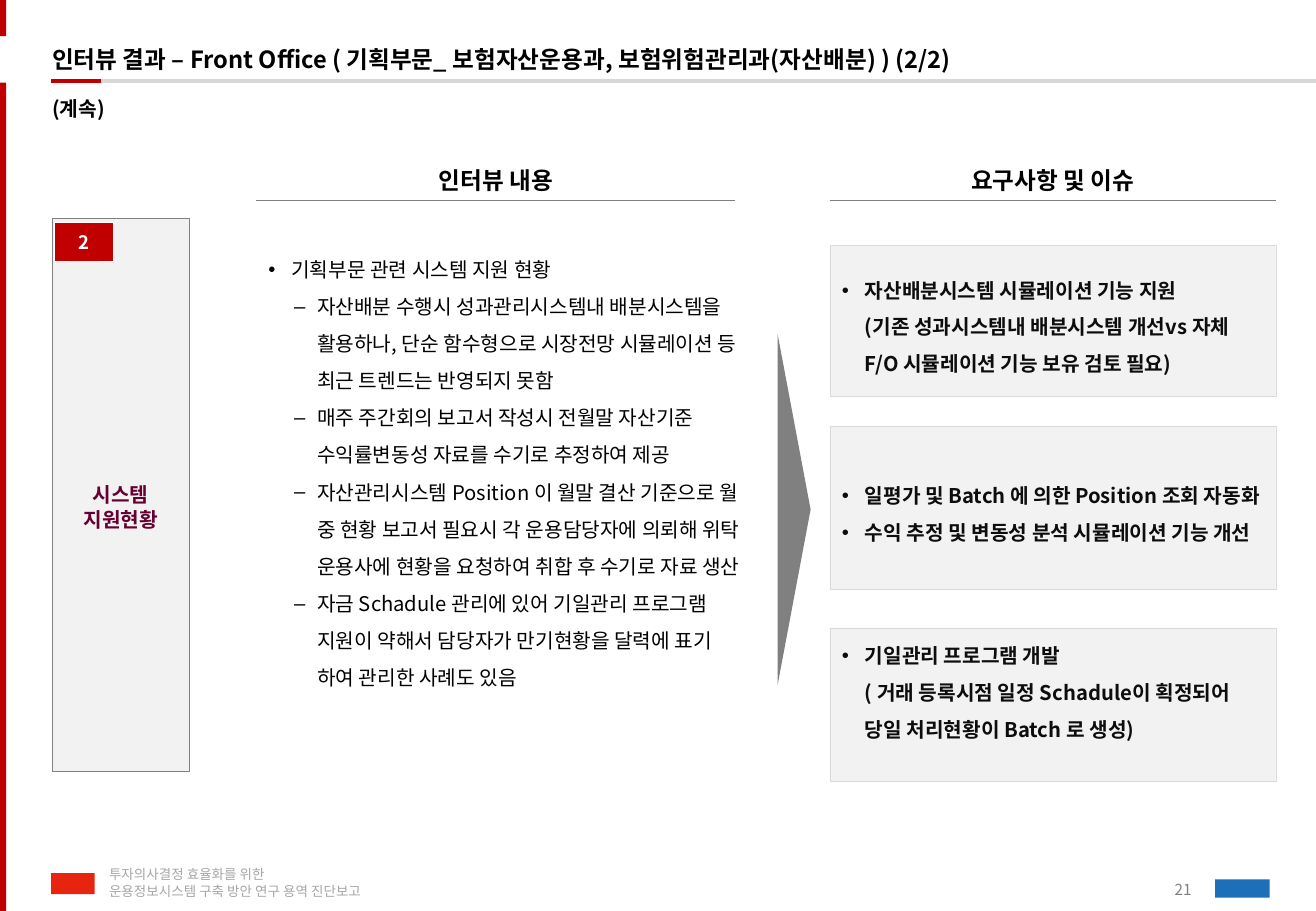
from dataclasses import dataclass
from typing import Optional

from lxml.etree import SubElement
from pptx import Presentation
from pptx.dml.color import RGBColor
from pptx.enum.shapes import MSO_CONNECTOR as Connector, MSO_SHAPE as Preset
from pptx.enum.text import MSO_ANCHOR as Anchor, MSO_AUTO_SIZE as AutoSize, PP_ALIGN as Align
from pptx.oxml.ns import qn
from pptx.util import Cm, Pt

KOREAN_FONT = "Noto Sans CJK KR"
RED, GRAY, PALE, BORDER = "C00000", "808080", "F2F2F2", "D9D9D9"
BLACK, INK, WHITE = "000000", "0D0D0D", "FFFFFF"
BULLETS = "•–"
INDENTS = (0.48, 1.02)
HANGING = 0.48


@dataclass(frozen=True)
class Area:
    left: float
    top: float
    width: float
    height: float

    def lengths(self) -> tuple:
        return Cm(self.left), Cm(self.top), Cm(self.width), Cm(self.height)


@dataclass(frozen=True)
class Style:
    size: float
    color: str = BLACK
    bold: bool = False
    align: Align = Align.LEFT
    spacing: Optional[float] = None
    latin: str = KOREAN_FONT


@dataclass(frozen=True)
class Item:
    text: str
    level: Optional[int] = None


@dataclass(frozen=True)
class Rule:
    start: float
    end: float
    y: float
    color: str
    weight: float


@dataclass(frozen=True)
class Block:
    area: Area
    fill: str
    border: Optional[str] = None
    preset: Preset = Preset.RECTANGLE
    rotation: float = 0


@dataclass(frozen=True)
class Issue:
    top: float
    height: float
    items: tuple
    bottom_inset: float = 0.13


def color(value: str) -> RGBColor:
    return RGBColor.from_string(value)


def write(shape, items: tuple, style: Style, anchor: Anchor = Anchor.MIDDLE,
          insets: tuple = (0.25, 0.13, 0.25, 0.13)) -> None:
    frame = shape.text_frame
    frame.auto_size = AutoSize.NONE
    frame.word_wrap = True
    frame.vertical_anchor = anchor
    frame.margin_left, frame.margin_top, frame.margin_right, frame.margin_bottom = map(Cm, insets)
    frame.text = "\n".join(item.text for item in items)
    for para, item in zip(frame.paragraphs, items):
        format_paragraph(para, item, style)


def format_paragraph(para, item: Item, style: Style) -> None:
    properties = para._p.get_or_add_pPr()
    if item.level is None:
        properties.set("marL", "0")
        properties.set("indent", "0")
        SubElement(properties, qn("a:buNone"))
    else:
        para.level = item.level
        properties.set("marL", str(Cm(INDENTS[item.level])))
        properties.set("indent", str(-Cm(HANGING)))
        SubElement(properties, qn("a:buFont")).set("typeface", "Arial")
        SubElement(properties, qn("a:buChar")).set("char", BULLETS[item.level])
    para.alignment = style.align
    para.space_before = Pt(0)
    if style.spacing:
        para.line_spacing = Pt(style.spacing)
    for span in para.runs:
        span.font.size = Pt(style.size)
        span.font.bold = style.bold
        span.font.color.rgb = color(style.color)
        span.font.name = style.latin
        SubElement(span._r.get_or_add_rPr(), qn("a:ea")).set("typeface", KOREAN_FONT)


def place(shape, area: Area):
    shape.left, shape.top, shape.width, shape.height = area.lengths()
    return shape


def add_block(page, block: Block):
    shape = page.shapes.add_shape(block.preset, *block.area.lengths())
    shape.shadow.inherit = False
    shape.rotation = block.rotation
    shape.fill.solid()
    shape.fill.fore_color.rgb = color(block.fill)
    if block.border:
        shape.line.color.rgb = color(block.border)
        shape.line.width = Pt(0.25)
    else:
        shape.line.fill.background()
    return shape


def add_rule(page, rule: Rule) -> None:
    line = page.shapes.add_connector(
        Connector.STRAIGHT, Cm(rule.start), Cm(rule.y), Cm(rule.end), Cm(rule.y))
    line.line.color.rgb = color(rule.color)
    line.line.width = Pt(rule.weight)
    SubElement(line._element.spPr, qn("a:effectLst"))


def add_text(page, area: Area, items: tuple, style: Style, **options) -> None:
    write(page.shapes.add_textbox(*area.lengths()), items, style, **options)


ISSUE_LEFT, ISSUE_WIDTH = 17.35, 9.32
INTERVIEW_LEFT, INTERVIEW_WIDTH = 5.36, 10.01
FLUSH = (0, 0, 0, 0)

DECORATIONS = (
    Block(Area(0, 1.73, 0.13, 17.32), RED),
    Block(Area(0, 0, 0.13, 0.76), RED),
    Block(Area(1.07, 18.26, 0.91, 0.44), "E72410"),
    Block(Area(25.4, 18.39, 1.14, 0.38), "1C6FB8"),
    Block(Area(12.93, 10.31, 7.34, 0.69), GRAY, preset=Preset.ISOSCELES_TRIANGLE, rotation=90),
)
TITLE_RULES = (Rule(1.07, 27.51, 1.7, "D8D8D8", 2.25), Rule(1.07, 2.11, 1.7, RED, 2.25))
HEADINGS = (
    ("인터뷰 내용", INTERVIEW_LEFT, INTERVIEW_WIDTH),
    ("요구사항 및 이슈", ISSUE_LEFT, ISSUE_WIDTH),
)
INTERVIEW = (
    Item("기획부문 관련 시스템 지원 현황", 0),
    Item("자산배분 수행시 성과관리시스템내 배분시스템을 활용하나, 단순 함수형으로 "
         "시장전망 시뮬레이션 등 최근 트렌드는 반영되지 못함", 1),
    Item("매주 주간회의 보고서 작성시 전월말 자산기준 수익률변동성 자료를 수기로 추정하여 제공", 1),
    Item("자산관리시스템 Position 이 월말 결산 기준으로 월 중 현황 보고서 필요시 "
         "각 운용담당자에 의뢰해 위탁 운용사에 현황을 요청하여 취합 후 수기로 자료 생산", 1),
    Item("자금 Schadule 관리에 있어 기일관리 프로그램 지원이 약해서 "
         "담당자가 만기현황을 달력에 표기 하여 관리한 사례도 있음", 1),
)
ISSUES = (
    Issue(5.13, 3.15, (
        Item("자산배분시스템 시뮬레이션 기능 지원\v(기존 성과시스템내 배분시스템 개선vs 자체 "
             "F/O 시뮬레이션 기능 보유 검토 필요)", 0),)),
    Issue(8.92, 3.4, (
        Item("일평가 및 Batch 에 의한 Position 조회 자동화", 0),
        Item("수익 추정 및 변동성 분석 시뮬레이션 기능 개선", 0))),
    Issue(13.13, 3.2, (
        Item("기일관리 프로그램 개발\v( 거래 등록시점 일정 Schadule이 획정되어 "
             "당일 처리현황이 Batch 로 생성)", 0),), bottom_inset=0.89),
)


def main() -> None:
    deck = Presentation()
    deck.slide_width, deck.slide_height = Cm(27.51), Cm(19.05)
    page = deck.slides.add_slide(deck.slide_layouts[3])
    title, subtitle, interview = page.placeholders

    for block in DECORATIONS:
        add_block(page, block)
    for rule in TITLE_RULES:
        add_rule(page, rule)

    write(place(title, Area(1.09, 0.79, 24.28, 0.89)),
          (Item("인터뷰 결과 – Front Office ( 기획부문_ 보험자산운용과, 보험위험관리과(자산배분) ) (2/2)"),),
          Style(14, bold=True), insets=FLUSH)
    write(place(subtitle, Area(1.09, 1.7, 25.58, 1.7)), (Item("(계속)"),),
          Style(12, bold=True, spacing=17.5), Anchor.TOP, (0, 0.2, 0, 0.3))
    write(place(interview, Area(INTERVIEW_LEFT, 4.98, 10.39, 11.15)), INTERVIEW,
          Style(12, spacing=22), Anchor.TOP)

    for heading, left, width in HEADINGS:
        add_rule(page, Rule(left, left + width, 4.19, GRAY, 0.25))
        add_text(page, Area(left, 3.33, width, 0.86), (Item(heading),),
                 Style(14, bold=True, align=Align.CENTER))

    topic = add_block(page, Block(Area(1.09, 4.57, 2.87, 11.56), PALE, GRAY))
    write(topic, (Item("시스템\v지원현황"),),
          Style(12, "660033", True, Align.CENTER, 14.5, "Arial"), insets=(0.25, 0.63, 0.25, 0.13))
    badge = add_block(page, Block(Area(1.14, 4.65, 1.22, 0.81), RED, WHITE))
    write(badge, (Item("2"),), Style(11, WHITE, True, Align.CENTER), insets=FLUSH)

    for issue in ISSUES:
        area = Area(ISSUE_LEFT, issue.top, ISSUE_WIDTH, issue.height)
        write(add_block(page, Block(area, PALE, BORDER)), issue.items,
              Style(12, INK, True, spacing=21.7), insets=(0.25, 0.13, 0.25, issue.bottom_inset))

    add_text(page, Area(2.03, 18.01, 7.11, 0.89),
             (Item("투자의사결정 효율화를 위한"), Item("운용정보시스템 구축 방안 연구 용역 진단보고")),
             Style(8, "A6A6A6", spacing=9.6))
    add_text(page, Area(23.44, 18.14, 1.47, 0.91), (Item("21"),),
             Style(9, GRAY, align=Align.RIGHT), insets=FLUSH)

    deck.save("out.pptx")


if __name__ == "__main__":
    main()
